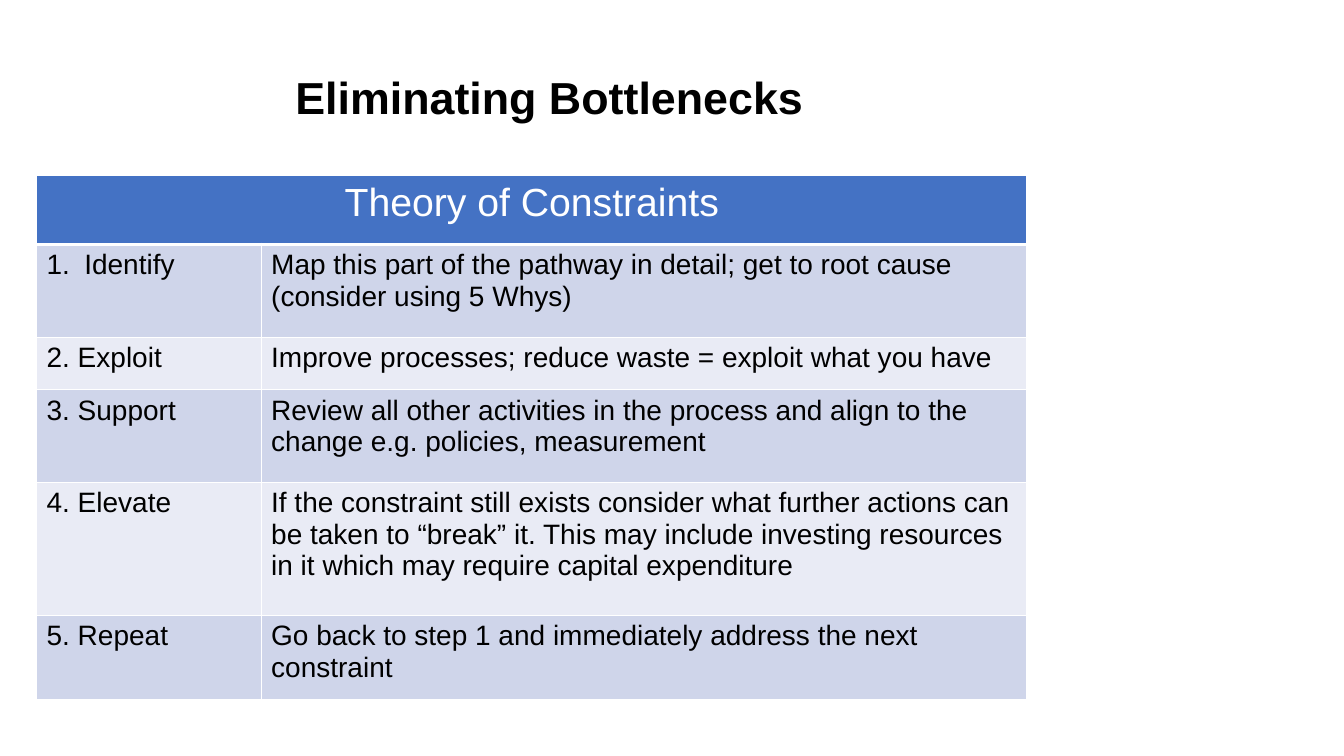
from dataclasses import dataclass

from lxml.etree import SubElement
from pptx import Presentation
from pptx.dml.color import RGBColor
from pptx.enum.text import MSO_ANCHOR, MSO_AUTO_SIZE as AutoSize, PP_ALIGN
from pptx.oxml.ns import qn
from pptx.slide import Slide
from pptx.table import _Cell as Cell
from pptx.text.text import _Paragraph as Paragraph
from pptx.util import Cm, Pt

BLACK = RGBColor(0x00, 0x00, 0x00)
WHITE = RGBColor(0xFF, 0xFF, 0xFF)
HEADER_BLUE = RGBColor(0x44, 0x72, 0xC4)
BAND_DARK = RGBColor(0xCF, 0xD5, 0xEA)
BAND_LIGHT = RGBColor(0xE9, 0xEB, 0xF5)
FONT = "Arial"
COLUMN_WIDTHS = (5.66, 19.3)
HEADER_HEIGHT = 1.73


@dataclass
class Step:
    name: str
    action: str
    height: float
    numbered: bool = False


STEPS = [
    Step("Identify", "Map this part of the pathway in detail; get to root cause "
         "(consider using 5 Whys)", 2.34, numbered=True),
    Step("2. Exploit", "Improve processes; reduce waste = exploit what you have", 1.32),
    Step("3. Support", "Review all other activities in the process and align to the "
         "change e.g. policies, measurement", 2.34),
    Step("4. Elevate", "If the constraint still exists consider what further actions can "
         "be taken to “break” it. This may include investing resources in it which may "
         "require capital expenditure", 3.35),
    Step("5. Repeat", "Go back to step 1 and immediately address the next constraint", 2.11),
]


def add_run(paragraph: Paragraph, text: str, size: int, color: RGBColor,
            bold: bool = False) -> None:
    run = paragraph.add_run()
    run.text = text
    run.font.name = FONT
    run.font.size = Pt(size)
    run.font.bold = bold
    run.font.color.rgb = color


def add_number(paragraph: Paragraph) -> None:
    """Give the paragraph an automatic number with a hanging indent."""
    properties = paragraph._p.get_or_add_pPr()
    properties.set("marL", str(Cm(0.95)))
    properties.set("indent", str(-Cm(0.95)))
    SubElement(properties, qn("a:buFont"), typeface="+mj-lt")
    SubElement(properties, qn("a:buAutoNum"), type="arabicPeriod")


def style_cell(cell: Cell, fill: RGBColor, top: float = 1, bottom: float = 1) -> None:
    """Draw white borders, then the fill, in the order the schema asks for."""
    properties = cell._tc.get_or_add_tcPr()
    for side, width in (("L", 1), ("R", 1), ("T", top), ("B", bottom)):
        line = SubElement(properties, qn(f"a:ln{side}"), w=str(Pt(width)))
        SubElement(SubElement(line, qn("a:solidFill")), qn("a:srgbClr"), val=str(WHITE))
    cell.fill.solid()
    cell.fill.fore_color.rgb = fill


def add_title(slide: Slide) -> None:
    title = slide.shapes.title
    title.left, title.top, title.width, title.height = Cm(7.19), Cm(1.63), Cm(13.51), Cm(1.63)
    frame = title.text_frame
    frame.word_wrap = True
    frame.auto_size = AutoSize.SHAPE_TO_FIT_TEXT
    frame.vertical_anchor = MSO_ANCHOR.TOP
    paragraph = frame.paragraphs[0]
    paragraph.alignment = PP_ALIGN.LEFT
    add_run(paragraph, "Eliminating Bottlenecks", 32, BLACK, bold=True)


def add_steps_table(slide: Slide) -> None:
    heights = [HEADER_HEIGHT] + [step.height for step in STEPS]
    table = slide.shapes.add_table(
        len(heights), len(COLUMN_WIDTHS), Cm(0.92), Cm(4.43),
        Cm(sum(COLUMN_WIDTHS)), Cm(sum(heights))).table
    for column, width in zip(table.columns, COLUMN_WIDTHS):
        column.width = Cm(width)
    for row, height in zip(table.rows, heights):
        row.height = Cm(height)

    # Header across both columns
    header = table.cell(0, 0)
    header.merge(table.cell(0, 1))
    for cell in table.rows[0].cells:
        style_cell(cell, HEADER_BLUE, bottom=3)
    paragraph = header.text_frame.paragraphs[0]
    paragraph.alignment = PP_ALIGN.CENTER
    add_run(paragraph, "Theory of Constraints", 28, WHITE)

    # One banded row per step
    for index, step in enumerate(STEPS, start=1):
        fill = BAND_DARK if index % 2 else BAND_LIGHT
        for cell, text in zip(table.rows[index].cells, (step.name, step.action)):
            style_cell(cell, fill, top=3 if index == 1 else 1)
            add_run(cell.text_frame.paragraphs[0], text, 20, BLACK)
        if step.numbered:
            add_number(table.cell(index, 0).text_frame.paragraphs[0])


def main() -> None:
    presentation = Presentation()
    presentation.slide_width, presentation.slide_height = Cm(33.87), Cm(19.05)
    slide = presentation.slides.add_slide(presentation.slide_layouts[5])
    add_title(slide)
    add_steps_table(slide)
    presentation.save("out.pptx")


if __name__ == "__main__":
    main()
